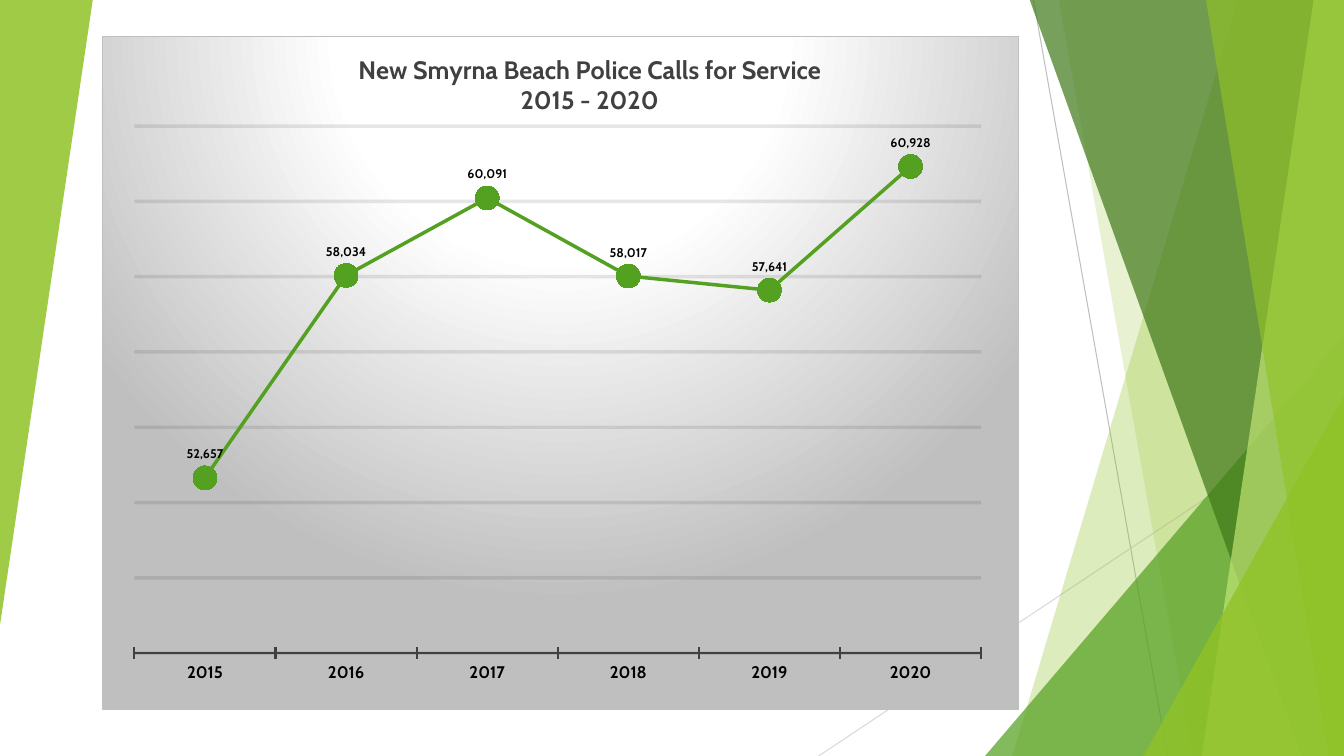
from lxml import etree
from pptx import Presentation
from pptx.chart.data import CategoryChartData
from pptx.dml.color import RGBColor
from pptx.enum.chart import XL_CHART_TYPE, XL_LABEL_POSITION, XL_MARKER_STYLE, XL_TICK_MARK
from pptx.enum.shapes import MSO_CONNECTOR, MSO_SHAPE
from pptx.oxml import parse_xml
from pptx.oxml.ns import nsdecls, qn
from pptx.util import Inches, Pt

LINE = XL_CHART_TYPE.LINE_MARKERS
ABOVE = XL_LABEL_POSITION.ABOVE
CIRCLE = XL_MARKER_STYLE.CIRCLE
CROSS = XL_TICK_MARK.CROSS
STRAIGHT = MSO_CONNECTOR.STRAIGHT
TRIANGLE = MSO_SHAPE.ISOSCELES_TRIANGLE

WIDE, HIGH, TOP = 13.33, 7.5, -0.01
FONT = "Cabin"
GREEN = "54A021"
TITLE = ["New Smyrna Beach Police Calls for Service", "2015 - 2020"]
CALLS = {"2015": 52657, "2016": 58034, "2017": 60091,
         "2018": 58017, "2019": 57641, "2020": 60928}
FRAME = (1.01, 0.36, 9.1, 6.68)
PLOT = {"x": 0.035, "y": 0.133, "w": 0.924, "h": 0.784}
HEAD = {"x": 0.276, "y": 0.02}
STOPS = [(0, "FFFFFF"), (39, "FFFFFF"), (100, "BFBFBF")]
RAYS = [(10.25, 0, 11.58, HIGH, "BFBFBF"), (WIDE, 4.03, 8.12, HIGH, "D9D9D9")]
SHARDS = [
    ("band", (12.28, 10.04), "90C226", 30),
    ("band", (10.5, 11.83), "90C226", 20),
    ("wedge", (9.77, 3.33, 3.56, 4.17, 0), GREEN, 72),
    ("band", (10.21, 12.91), "3F7819", 70),
    ("band", (13.03, 11.92), "C0E474", 70),
    ("band", (11.96, 13.18), "90C226", 65),
    ("wedge", (11.34, 3.93, 1.99, 3.57, 0), "90C226", 80),
    ("wedge", (0, 0, 0.92, 6.2, 180), "90C226", 85),
]


def paint(fill, color, alpha=100):
    fill.solid()
    fill.fore_color.rgb = RGBColor.from_string(color)
    if alpha < 100:
        node = fill._xPr.find(f".//{qn('a:srgbClr')}")
        etree.SubElement(node, qn("a:alpha"), val=str(alpha * 1000))


def stroke(line, color, width, alpha=100):
    paint(line.fill, color, alpha)
    line.width = Pt(width)


def style(font, size, color="000000", bold=True):
    font.name, font.size, font.bold = FONT, Pt(size), bold
    font.color.rgb = RGBColor.from_string(color)


def layout(spots, inner=False):
    target = '<c:layoutTarget val="inner"/>' if inner else ""
    modes = "".join(f'<c:{k}Mode val="edge"/>' for k in spots if k in "xy")
    sizes = "".join(f'<c:{k} val="{v}"/>' for k, v in spots.items())
    return parse_xml(f'<c:layout {nsdecls("c")}><c:manualLayout>{target}{modes}{sizes}'
                     "</c:manualLayout></c:layout>")


def place(parent, node, index):
    old = parent.find(qn("c:layout"))
    if old is not None:
        parent.remove(old)
    parent.insert(index, node)


def draw_ray(shapes, x1, y1, x2, y2, color):
    ray = shapes.add_connector(STRAIGHT, *map(Inches, (x1, y1, x2, y2)))
    stroke(ray.line, color, 0.75)
    etree.SubElement(ray._element.spPr, qn("a:effectLst"))


def draw_shard(shapes, kind, geo, color, alpha):
    if kind == "band":
        top, foot = geo
        pen = shapes.build_freeform(Inches(top), Inches(TOP))
        ends = [(WIDE, TOP), (WIDE, HIGH), (foot, HIGH)]
        pen.add_line_segments([(Inches(x), Inches(y)) for x, y in ends])
        shard = pen.convert_to_shape()
    else:
        shard = shapes.add_shape(TRIANGLE, *map(Inches, geo[:4]))
        shard.adjustments[0] = 1
        shard.rotation = geo[4]
    shard.shadow.inherit = False
    paint(shard.fill, color, alpha)
    shard.line.fill.background()


def draw_chart(shapes):
    data = CategoryChartData(number_format="#,##0")
    data.categories = list(CALLS)
    data.add_series("Series 1", list(CALLS.values()))
    chart = shapes.add_chart(LINE, *map(Inches, FRAME), data).chart
    style(chart.font, 10, bold=False)
    chart.has_legend = False

    chart.has_title = True
    title = chart.chart_title
    text = title.text_frame
    text.text = "\n".join(TITLE)
    for para in text.paragraphs:
        style(para.font, 18, "404040")
        for run in para.runs:
            style(run.font, 18, "404040")
    place(title._element, layout(HEAD), 1)

    years = chart.category_axis
    years.major_tick_mark = CROSS
    years.has_major_gridlines = False
    style(years.tick_labels.font, 12)
    stroke(years.format.line, "404040", 1.5)

    scale = chart.value_axis
    scale.minimum_scale, scale.maximum_scale, scale.major_unit = 48000, 62000, 2000
    scale.visible = False
    scale.has_major_gridlines = True
    stroke(scale.major_gridlines.format.line, "0D0D0D", 2.5, 10)

    plot = chart.plots[0]
    plot.vary_by_categories = False
    calls = plot.series[0]
    calls.smooth = False
    stroke(calls.format.line, GREEN, 2.5)
    mark = calls.marker
    mark.style, mark.size = CIRCLE, 17
    paint(mark.format.fill, GREEN)
    mark.format.line.fill.background()
    tags = calls.data_labels
    tags.show_value, tags.position = True, ABOVE
    tags.number_format, tags.number_format_is_linked = "#,##0", False
    style(tags.font, 9)

    body = chart.element.find(qn("c:chart"))
    place(body.find(qn("c:plotArea")), layout(PLOT, True), 0)
    stops = "".join(f'<a:gs pos="{p * 1000}"><a:srgbClr val="{c}"/></a:gs>' for p, c in STOPS)
    body.addnext(parse_xml(
        f'<c:spPr {nsdecls("c", "a")}><a:gradFill><a:gsLst>{stops}</a:gsLst>'
        '<a:path path="circle"><a:fillToRect l="50000" t="-80000" r="50000" b="180000"/>'
        '</a:path></a:gradFill><a:ln w="9525"><a:solidFill><a:srgbClr val="BFBFBF"/>'
        "</a:solidFill></a:ln></c:spPr>"))


def main():
    deck = Presentation()
    deck.slide_width, deck.slide_height = Inches(WIDE), Inches(HIGH)
    shapes = deck.slides.add_slide(deck.slide_layouts[6]).shapes
    for ray in RAYS:
        draw_ray(shapes, *ray)
    for shard in SHARDS:
        draw_shard(shapes, *shard)
    draw_chart(shapes)
    deck.save("out.pptx")


if __name__ == "__main__":
    main()
